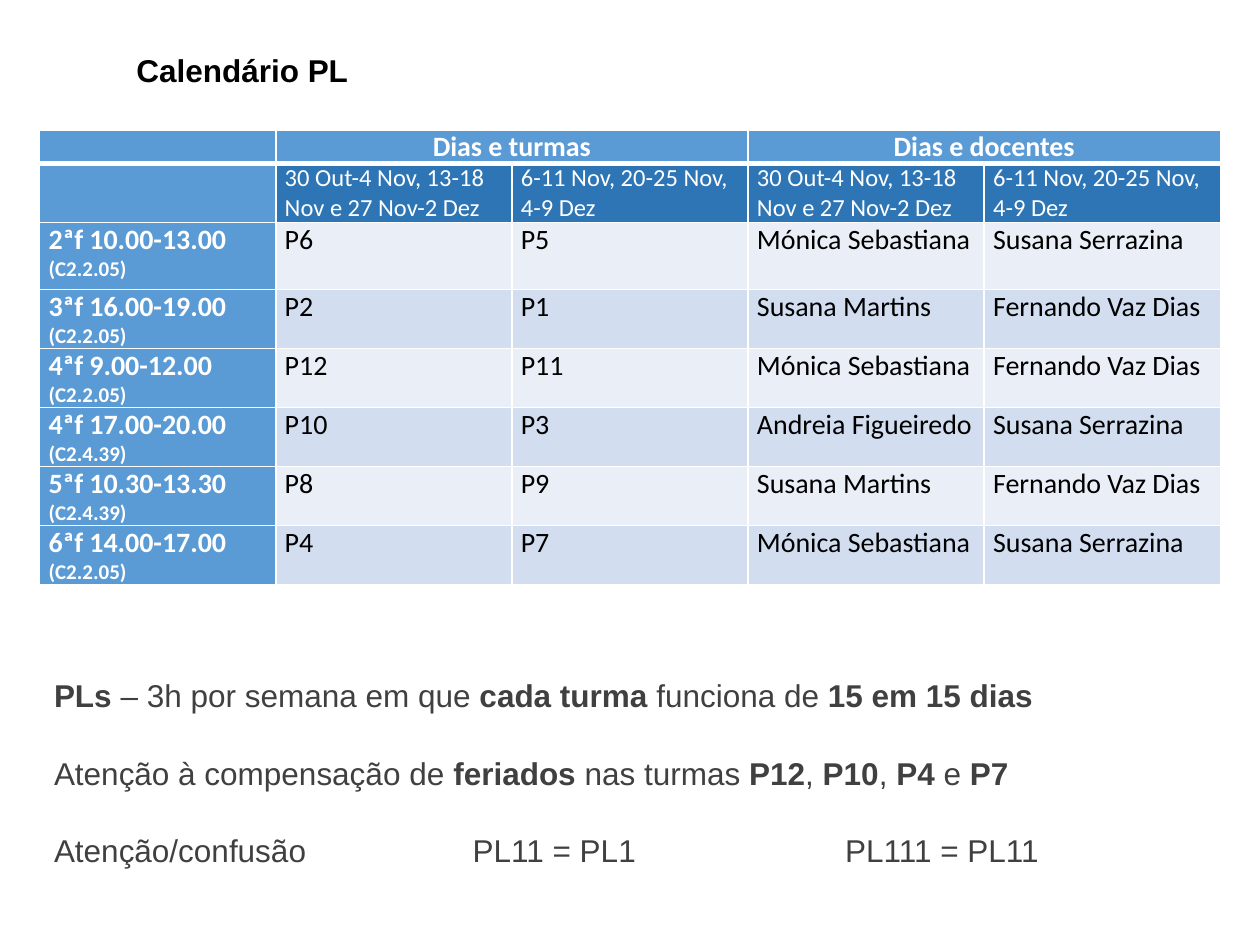
"""Build the practical-class calendar slide."""
from lxml import etree
from pptx import Presentation
from pptx.dml.color import RGBColor
from pptx.enum import text as t
from pptx.oxml import ns
from pptx.util import Cm, Pt

HUES = {"head": "5B9BD5", "dates": "2E75B6", "light": "EAEFF7", "dark": "D2DEEF",
        "white": "FFFFFF", "black": "000000", "grey": "404040"}
TITLE = "Calendário PL"
HEADS = ["", "Dias e turmas", "", "Dias e docentes", ""]
DATES = ["30 Out-4 Nov, 13-18 Nov e 27 Nov-2 Dez", "6-11 Nov, 20-25 Nov, 4-9 Dez"]
ROWS = [
    ("2ªf 10.00-13.00", "C2.2.05", "P6", "P5", "Mónica Sebastiana", "Susana Serrazina"),
    ("3ªf 16.00-19.00", "C2.2.05", "P2", "P1", "Susana Martins", "Fernando Vaz Dias"),
    ("4ªf 9.00-12.00", "C2.2.05", "P12", "P11", "Mónica Sebastiana", "Fernando Vaz Dias"),
    ("4ªf 17.00-20.00", "C2.4.39", "P10", "P3", "Andreia Figueiredo", "Susana Serrazina"),
    ("5ªf 10.30-13.30", "C2.4.39", "P8", "P9", "Susana Martins", "Fernando Vaz Dias"),
    ("6ªf 14.00-17.00", "C2.2.05", "P4", "P7", "Mónica Sebastiana", "Susana Serrazina"),
]
NOTES = [
    "**PLs **– 3h por semana em que **cada turma **funciona de **15 em 15 dias**",
    "Atenção à compensação de **feriados** nas turmas **P12**, **P10**, **P4** e **P7**",
    "Atenção/confusão\tPL11 = PL1\tPL111 = PL11",
]
STOPS = [8.44, 15.95]
HIGHS = [0.67, 1.17, 1.35] + [1.19] * 5
WIDE = 4.76


def put(item, vals):
    for key, val in vals.items():
        setattr(item, key, val)


def sub(node, tag, **vals):
    return etree.SubElement(node, ns.qn(tag), **vals)


def add_run(para, words, size, hue, bold=False, face="Calibri"):
    run = para.add_run()
    run.text = words
    put(run.font, {"size": Pt(size), "bold": bold, "name": face})
    run.font.color.rgb = RGBColor.from_string(HUES[hue])


def edge(cell, row):
    props = cell._tc.get_or_add_tcPr()
    thick = {(0, "B"): 3, (1, "T"): 3}
    for spot, side in enumerate("LRTB"):
        wide = Pt(thick.get((row, side), 1))
        line = etree.Element(ns.qn(f"a:ln{side}"), w=str(wide))
        sub(sub(line, "a:solidFill"), "a:srgbClr", val=HUES["white"])
        props.insert(spot, line)


def fill_cell(cell, row, lines, back, hue, mid=False):
    put(cell, {"margin_left": Cm(0.18), "margin_right": Cm(0.18),
               "margin_top": 0, "margin_bottom": 0})
    cell.fill.solid()
    cell.fill.fore_color.rgb = RGBColor.from_string(HUES[back])
    edge(cell, row)
    if mid:
        cell.vertical_anchor = t.MSO_ANCHOR.MIDDLE
    for spot, (words, size, bold) in enumerate(lines):
        frame = cell.text_frame
        para = frame.add_paragraph() if spot else frame.paragraphs[0]
        if mid:
            para.alignment = t.PP_ALIGN.CENTER
        if words:
            add_run(para, words, size, hue, bold)
        else:
            sub(para._p, "a:endParaRPr", sz=str(size * 100))


def add_grid(slide):
    frame = slide.shapes.add_table(len(HIGHS), len(HEADS), Cm(0.8), Cm(2.62),
                                   Cm(WIDE * len(HEADS)), Cm(sum(HIGHS)))
    grid = frame.table
    put(grid, {"first_row": False, "horz_banding": False})
    for col in grid.columns:
        col.width = Cm(WIDE)
    for row, high in zip(grid.rows, HIGHS):
        row.height = Cm(high)
    for col, words in enumerate(HEADS):
        fill_cell(grid.cell(0, col), 0, [(words, 14, True)], "head", "white", True)
    for col in (1, 3):
        grid.cell(0, col).merge(grid.cell(0, col + 1))
    for col, words in enumerate([""] + DATES * 2):
        back = "dates" if col else "head"
        fill_cell(grid.cell(1, col), 1, [(words, 14, False)], back, "white")
    for col in (1, 3):
        grid.cell(0, col).text_frame.paragraphs[0].runs[0].font.size = Pt(16)
    for row, (hour, room, *rest) in enumerate(ROWS, 2):
        lines = [(hour, 16, True), (f"({room})", 12, True)]
        fill_cell(grid.cell(row, 0), row, lines, "head", "white")
        back = "dark" if row % 2 else "light"
        for col, words in enumerate(rest, 1):
            fill_cell(grid.cell(row, col), row, [(words, 16, False)], back, "black")


def add_box(slide, place, lines, hue, wrap):
    frame = slide.shapes.add_textbox(*map(Cm, place)).text_frame
    frame.word_wrap = wrap
    for spot, words in enumerate(lines):
        para = frame.add_paragraph() if spot else frame.paragraphs[0]
        if spot:
            para.space_before = Pt(22.5)
        for turn, part in enumerate(words.split("**")):
            if part:
                add_run(para, part, 18, hue, turn % 2 == 1, "Arial")
        if "\t" in words:
            tabs = sub(para._p.get_or_add_pPr(), "a:tabLst")
            for stop in STOPS:
                sub(tabs, "a:tab", pos=str(Cm(stop)), algn="l")


def main():
    deck = Presentation()
    put(deck, {"slide_width": Cm(25.4), "slide_height": Cm(19.05)})
    slide = deck.slides.add_slide(deck.slide_layouts[6])
    add_box(slide, (2.5, 0.9, 4.97, 1.03), [f"**{TITLE}**"], "black", False)
    add_grid(slide)
    add_box(slide, (0.84, 13.51, 23.8, 6.4), NOTES, "grey", True)
    deck.save("out.pptx")


if __name__ == "__main__":
    main()
